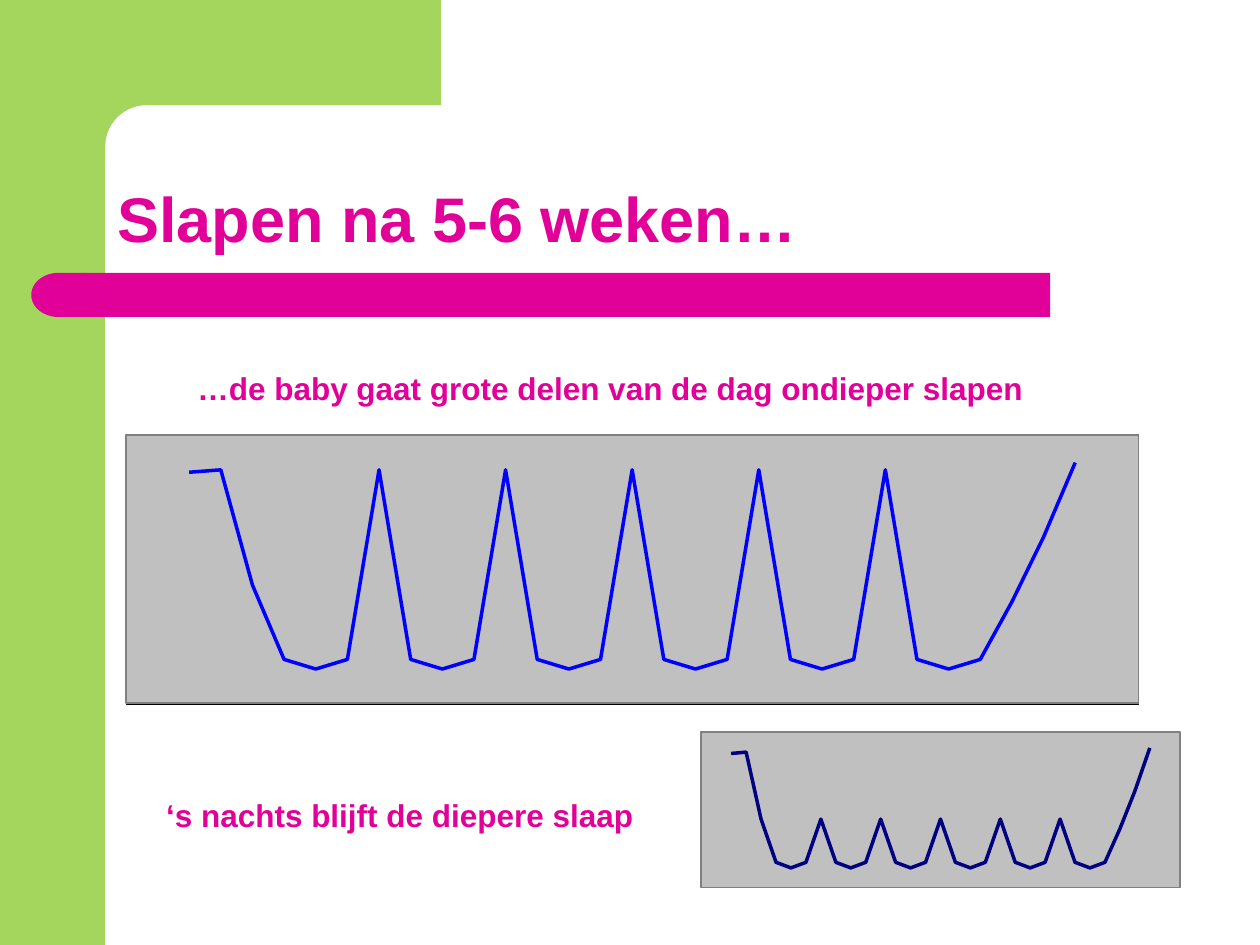
from math import cos, pi, sin

from lxml import etree
from pptx import Presentation
from pptx.chart.data import XyChartData
from pptx.dml.color import RGBColor
from pptx.enum.chart import XL_CHART_TYPE as ChartType
from pptx.enum.shapes import MSO_SHAPE as Preset
from pptx.enum.text import MSO_ANCHOR as Anchor
from pptx.oxml import parse_xml
from pptx.oxml.ns import nsdecls, qn
from pptx.util import Cm, Pt

GREEN = RGBColor(0xA4, 0xD6, 0x5E)
PINK = RGBColor(0xE1, 0x00, 0x98)
BLUE = RGBColor(0x00, 0x00, 0xFF)
NAVY = RGBColor(0x00, 0x00, 0x80)
BLACK = RGBColor(0x00, 0x00, 0x00)

TITLE = {"size": Pt(36), "bold": True, "name": "Arial"}
CAPTION = {**TITLE, "size": Pt(18)}


def sleep_curve(peak):
    """Sleep depth at half-hour steps: falling asleep, five cycles, waking."""
    return [96, 97, 49] + [18, 14, 18, peak] * 5 + [18, 14, 18, 42, 69, 100]


def frame_xml(fill, line, width):
    """Shape properties for a chart area; width is in points."""
    outline = (f'<a:ln w="{int(Pt(width))}"><a:solidFill><a:srgbClr val="{line}"/>'
               '</a:solidFill></a:ln>' if line else '<a:ln><a:noFill/></a:ln>')
    return parse_xml(f'<c:spPr {nsdecls("c", "a")}><a:solidFill>'
                     f'<a:srgbClr val="{fill}"/></a:solidFill>{outline}</c:spPr>')


class SlideBuilder:
    def __init__(self, page, color):
        self.page = page
        self.color = color

    def paint(self, shape, color):
        shape.shadow.inherit = False
        shape.fill.solid()
        shape.fill.fore_color.rgb = color
        shape.line.fill.background()

    def block(self, preset, left, top, width, height, color, rotation=0):
        shape = self.page.shapes.add_shape(
            preset, Cm(left), Cm(top), Cm(width), Cm(height))
        shape.rotation = rotation
        self.paint(shape, color)

    def outline(self, points, color):
        pairs = [(Cm(x), Cm(y)) for x, y in points]
        builder = self.page.shapes.build_freeform(*pairs[0])
        builder.add_line_segments(pairs[1:], close=True)
        self.paint(builder.convert_to_shape(), color)

    def text(self, words, left, top, width, height, style,
             anchor=Anchor.TOP, spacing=1.0):
        box = self.page.shapes.add_textbox(Cm(left), Cm(top), Cm(width), Cm(height))
        box.text_frame.word_wrap = True
        box.text_frame.vertical_anchor = anchor
        para = box.text_frame.paragraphs[0]
        para.line_spacing = spacing
        span = para.add_run()
        span.text = words
        for key, value in style.items():
            setattr(span.font, key, value)
        span.font.color.rgb = self.color

    def curve(self, depths, left, top, width, height, color, plot, border=None):
        """Smooth scatter line; plot is the inner area's top and height share."""
        data = XyChartData()
        points = data.add_series("Series 1")
        for step, depth in enumerate(depths):
            points.add_data_point(1 + step / 2, depth)
        chart = self.page.shapes.add_chart(
            ChartType.XY_SCATTER_SMOOTH_NO_MARKERS,
            Cm(left), Cm(top), Cm(width), Cm(height), data).chart
        chart.has_legend = chart.has_title = False
        for key, value in {"size": Pt(11), "name": "Arial"}.items():
            setattr(chart.font, key, value)
        chart.font.color.rgb = BLACK
        for axis, top_value in ((chart.category_axis, 16), (chart.value_axis, 111.5)):
            axis.minimum_scale, axis.maximum_scale = 0, top_value
            axis.has_major_gridlines = False
            axis.visible = False
        series = chart.plots[0].series[0]
        series.smooth = True
        series.format.line.width = Pt(2)
        series.format.line.color.rgb = color
        self.frame(chart, plot, border)

    def frame(self, chart, plot, border):
        """Fix the plot area's place and colour both chart backgrounds."""
        root = chart.element
        area = root.find(".//" + qn("c:plotArea"))
        for old in area.findall(qn("c:layout")):
            area.remove(old)
        layout = etree.Element(qn("c:layout"))
        manual = etree.SubElement(layout, qn("c:manualLayout"))
        places = {"layoutTarget": "inner", "xMode": "edge", "yMode": "edge",
                  "x": 0, "y": plot[0], "w": 1, "h": plot[1]}
        for key, value in places.items():
            etree.SubElement(manual, qn("c:" + key)).set("val", str(value))
        area.insert(0, layout)
        area.append(frame_xml("C0C0C0", "808080", 1))
        root.find(qn("c:chart")).addnext(frame_xml("FFFFFF", border, 0.25))


def main():
    deck = Presentation()
    deck.slide_width, deck.slide_height = Cm(25.4), Cm(19.05)
    page = deck.slides.add_slide(deck.slide_layouts[6])
    slide = SlideBuilder(page, PINK)

    side, radius, steps = 2.12, 0.84, 16
    slide.block(Preset.RECTANGLE, 0, 0, side, 19.05, GREEN)
    angles = [pi / 2 * step / steps for step in range(steps + 1)]
    corner = [(side + radius * (1 - sin(a)), side + radius * (1 - cos(a)))
              for a in angles]
    slide.outline([(1.27, 0), (8.89, 0), (8.89, side), *corner,
                   (side, 3.25), (1.27, 3.25)], GREEN)
    slide.block(Preset.RECTANGLE, 1.7, 5.5, 19.47, 0.89, PINK)
    slide.block(Preset.FLOWCHART_DELAY, 0.63, 5.5, 1.09, 0.89, PINK, rotation=180)

    slide.text("Slapen na 5-6 weken…", 2.12, 2.12, 22.01, 3.17, TITLE,
               Anchor.BOTTOM, 0.9)
    slide.curve(sleep_curve(97), 2.52, 8.74, 20.45, 5.46, BLUE,
                (0.005, 0.99), "000000")
    slide.text("‘s nachts blijft de diepere slaap", 3.1, 15.93, 10.8, 1.02, CAPTION)
    slide.text("…de baby gaat grote delen van de dag ondieper slapen",
               3.73, 7.32, 21.67, 1.02, CAPTION)
    slide.curve(sleep_curve(49), 14.12, 14.73, 9.68, 3.18, NAVY, (0.008, 0.99))
    deck.save("out.pptx")


if __name__ == "__main__":
    main()
